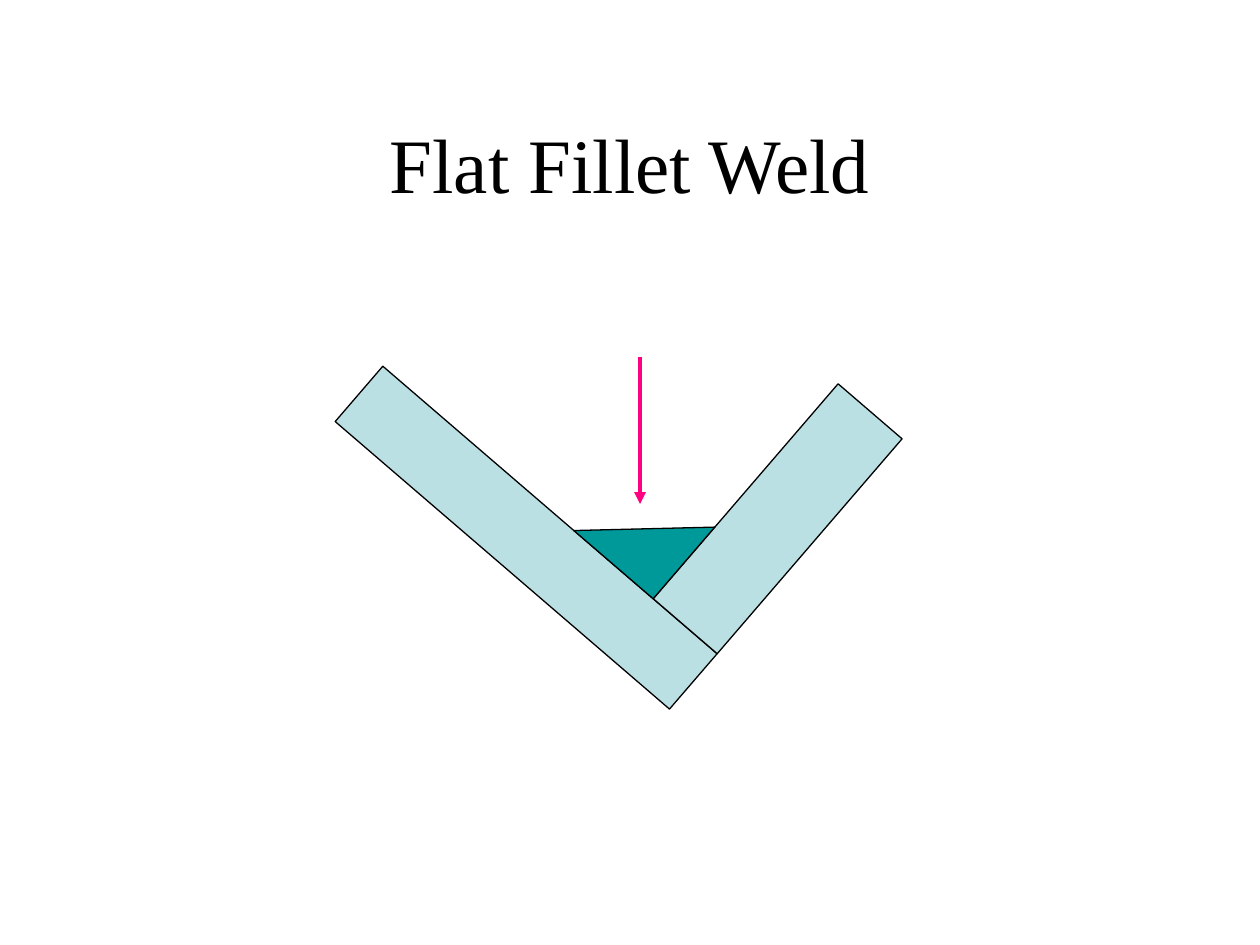
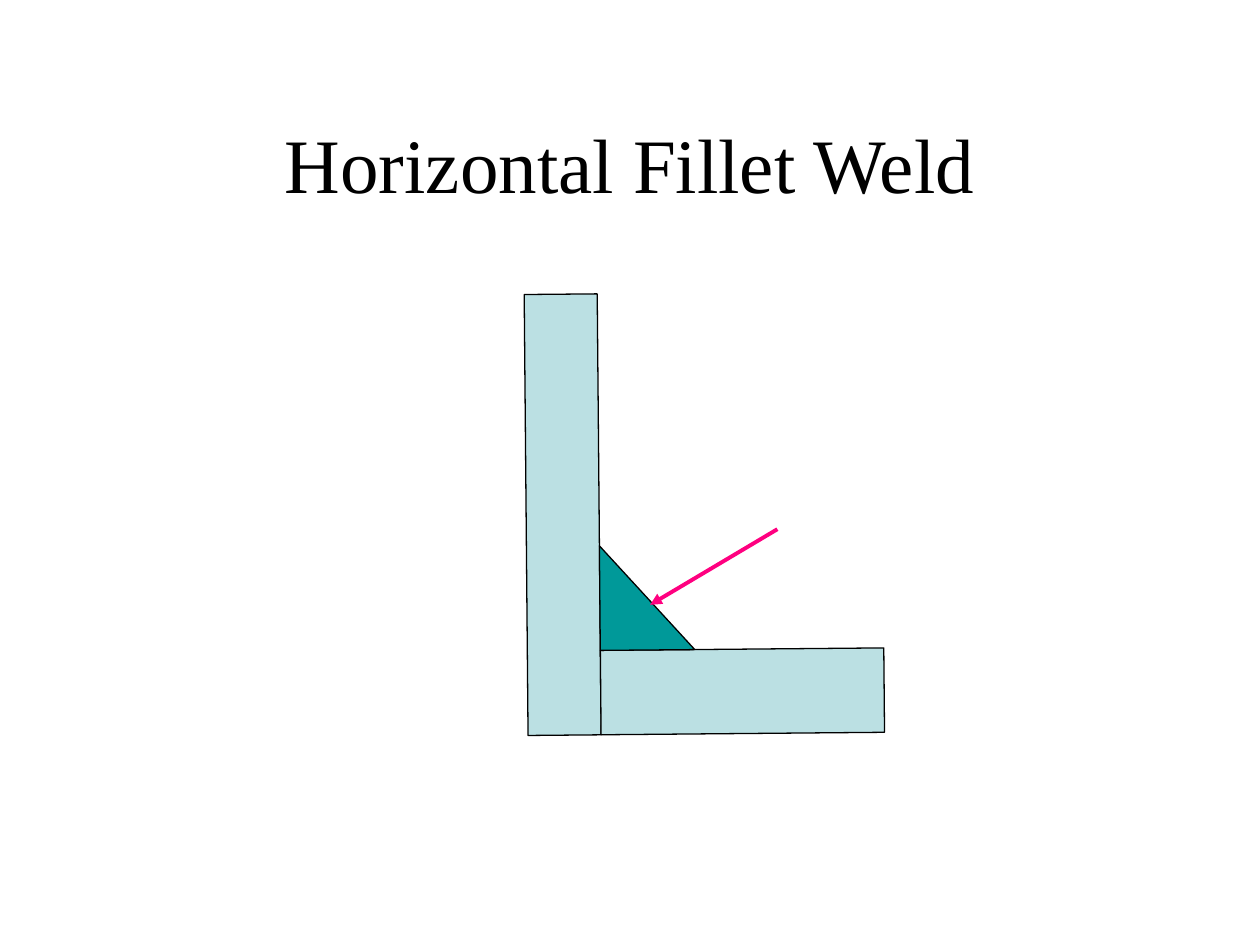
from dataclasses import dataclass

from lxml.etree import SubElement
from pptx import Presentation
from pptx.dml.color import RGBColor
from pptx.enum.shapes import MSO_CONNECTOR, MSO_SHAPE
from pptx.enum.text import MSO_ANCHOR, PP_ALIGN
from pptx.oxml.ns import qn
from pptx.util import Pt

PX = 9144
TITLE_BOX = (75, 67, 850, 125)
PLATE_THICKNESS = 58
UPRIGHT_WIDTH = 67
UPRIGHT_HEIGHT = 225
WELD_WIDTH = 83
WELD_HEIGHT = 75


@dataclass(frozen=True)
class Theme:
    font: str = "Times New Roman"
    title_size: Pt = Pt(44)
    ink: RGBColor = RGBColor(0x00, 0x00, 0x00)
    plate: RGBColor = RGBColor(0xBB, 0xE0, 0xE3)
    weld: RGBColor = RGBColor(0x00, 0x99, 0x99)
    pointer: RGBColor = RGBColor(0xFF, 0x00, 0x80)
    outline: Pt = Pt(0.75)
    pointer_width: Pt = Pt(2.25)


THEME = Theme()


def emu(*lengths):
    return [length * PX for length in lengths]


def add_title(slide, wording, box):
    title = slide.shapes.title
    title.left, title.top, title.width, title.height = emu(*box)
    frame = title.text_frame
    frame.text = wording
    frame.vertical_anchor = MSO_ANCHOR.MIDDLE
    paragraph = frame.paragraphs[0]
    paragraph.alignment = PP_ALIGN.CENTER
    paragraph.font.name = THEME.font
    paragraph.font.size = THEME.title_size
    paragraph.font.color.rgb = THEME.ink


def paint(part, fill):
    part.shadow.inherit = False
    part.fill.solid()
    part.fill.fore_color.rgb = fill
    part.line.color.rgb = THEME.ink
    part.line.width = THEME.outline


def add_plate(joint, box):
    plate = joint.shapes.add_shape(MSO_SHAPE.RECTANGLE, *emu(*box))
    paint(plate, THEME.plate)


def add_weld(joint, corner_x, corner_y):
    outline = joint.shapes.build_freeform(corner_x, corner_y - WELD_HEIGHT, scale=PX)
    outline.add_line_segments(
        [(corner_x - WELD_WIDTH, corner_y), (corner_x, corner_y)], close=True
    )
    paint(outline.convert_to_shape(), THEME.weld)


def add_joint(slide, box, angle):
    left, top, width, height = box
    upright_left = left + width - UPRIGHT_WIDTH
    base_top = top + height - PLATE_THICKNESS
    joint = slide.shapes.add_group_shape()
    add_plate(joint, (left, base_top, width, PLATE_THICKNESS))
    add_plate(joint, (upright_left, top, UPRIGHT_WIDTH, UPRIGHT_HEIGHT))
    add_weld(joint, upright_left, base_top)
    joint.rotation = angle


def add_pointer(slide, start, end):
    pointer = slide.shapes.add_connector(MSO_CONNECTOR.STRAIGHT, *emu(*start, *end))
    pointer.line.color.rgb = THEME.pointer
    pointer.line.width = THEME.pointer_width
    SubElement(pointer.line._get_or_add_ln(), qn("a:tailEnd"), type="triangle")
    SubElement(pointer._element.spPr, qn("a:effectLst"))


def add_weld_slide(deck, wording, joint_box, angle, pointer_start, pointer_end):
    slide = deck.slides.add_slide(deck.slide_layouts[5])
    add_title(slide, wording, TITLE_BOX)
    add_joint(slide, joint_box, angle)
    add_pointer(slide, pointer_start, pointer_end)


def main():
    deck = Presentation()
    deck.slide_width, deck.slide_height = emu(1000, 750)
    joint_size = (350, UPRIGHT_HEIGHT + PLATE_THICKNESS)
    add_weld_slide(
        deck, "Flat Fillet Weld", (316, 200, *joint_size), 40.7, (508, 283), (508, 400)
    )
    add_weld_slide(
        deck, "Horizontal Fillet Weld", (384, 266, *joint_size), 89.5, (617, 420), (516, 480)
    )
    deck.save("out.pptx")


if __name__ == "__main__":
    main()
